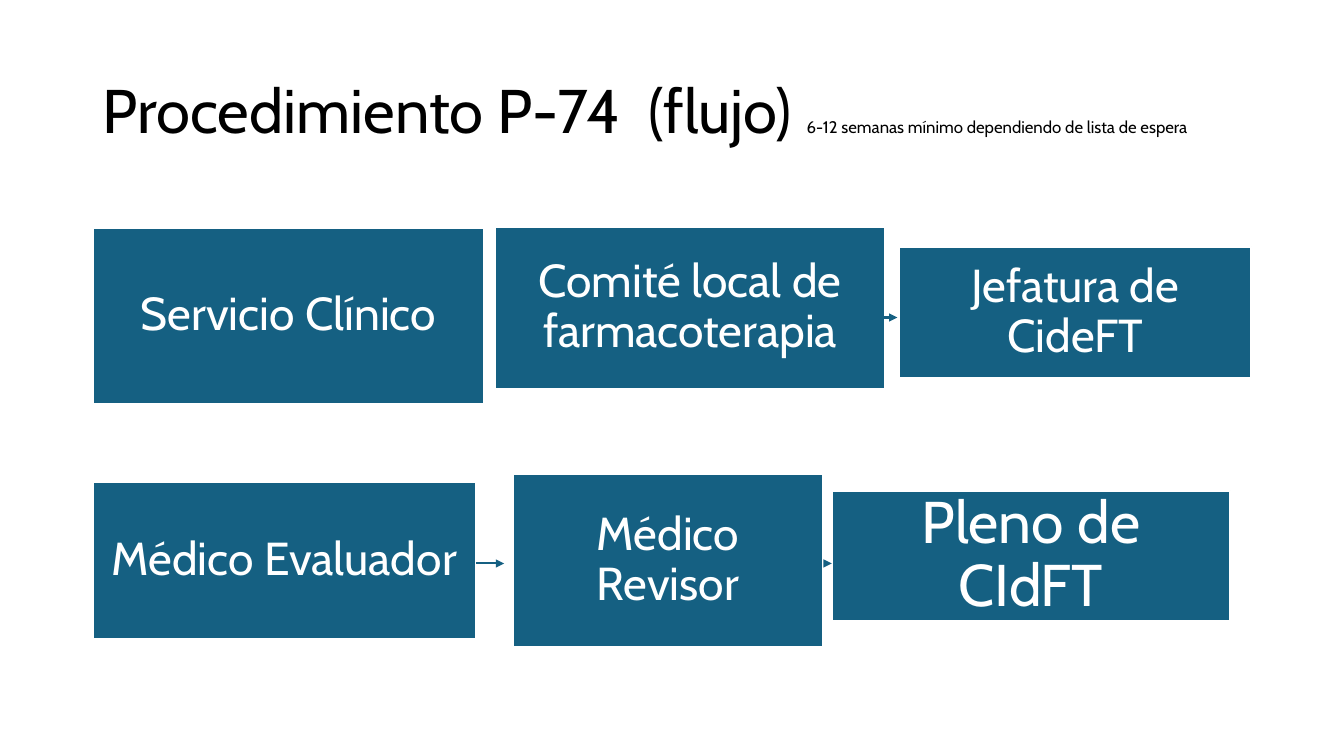
from dataclasses import dataclass

from lxml.etree import SubElement
from pptx import Presentation
from pptx.dml.color import RGBColor
from pptx.enum.shapes import MSO_CONNECTOR, MSO_SHAPE
from pptx.enum.text import MSO_ANCHOR, MSO_AUTO_SIZE, PP_ALIGN
from pptx.oxml.ns import qn
from pptx.slide import Slide
from pptx.util import Emu, Pt

EMU_PER_PX = 9144
FONT = "Cabin"
COLORS = {"box": "156082", "white": "FFFFFF", "black": "000000"}


@dataclass(frozen=True)
class Step:
    label: str
    left: int
    top: int
    width: int
    height: int
    size: int = 33
    inset: int = 14


@dataclass(frozen=True)
class Arrow:
    start: int
    end: int
    y: int


STEPS = [
    Step("Servicio Clínico", 92, 226, 388, 175),
    Step("Comité local de farmacoterapia", 491, 225, 387, 161),
    Step("Jefatura de CideFT", 892, 245, 349, 130),
    Step("Médico Evaluador", 92, 478, 380, 156),
    Step("Médico Revisor", 509, 470, 307, 172),
    Step("Pleno de CIdFT", 825, 487, 395, 129, size=42, inset=17),
]
ARROWS = [Arrow(874, 890, 315), Arrow(472, 500, 559), Arrow(818, 825, 559)]


def px(length: int) -> Emu:
    return Emu(length * EMU_PER_PX)


def color(name: str) -> RGBColor:
    return RGBColor.from_string(COLORS[name])


def write_title(page: Slide) -> None:
    title = page.shapes.title
    title.left, title.top, title.width, title.height = px(92), px(40), px(1150), px(145)
    frame = title.text_frame
    frame.auto_size = MSO_AUTO_SIZE.NONE
    frame.vertical_anchor = MSO_ANCHOR.MIDDLE
    para = frame.paragraphs[0]
    para.alignment = PP_ALIGN.LEFT
    para.line_spacing = 0.9
    para.font.name = FONT
    para.font.color.rgb = color("black")
    for words, size in (
        ("Procedimiento P-74  (flujo) ", 44),
        ("6-12 semanas mínimo dependiendo de lista de espera", 12),
    ):
        span = para.add_run()
        span.text = words
        span.font.size = Pt(size)


def draw_step(page: Slide, step: Step) -> None:
    box = page.shapes.add_shape(
        MSO_SHAPE.RECTANGLE, px(step.left), px(step.top), px(step.width), px(step.height)
    )
    box.shadow.inherit = False
    box.fill.solid()
    box.fill.fore_color.rgb = color("box")
    box.line.color.rgb = color("white")
    box.line.width = Pt(1.5)
    frame = box.text_frame
    frame.word_wrap = True
    frame.vertical_anchor = MSO_ANCHOR.MIDDLE
    frame.margin_left = frame.margin_right = px(step.inset)
    frame.margin_top = frame.margin_bottom = px(step.inset)
    para = frame.paragraphs[0]
    para.text = step.label
    para.alignment = PP_ALIGN.CENTER
    para.line_spacing = 0.9
    para.font.name = FONT
    para.font.size = Pt(step.size)
    para.font.color.rgb = color("white")


def draw_arrow(page: Slide, arrow: Arrow) -> None:
    connector = page.shapes.add_connector(
        MSO_CONNECTOR.STRAIGHT, px(arrow.start), px(arrow.y), px(arrow.end), px(arrow.y)
    )
    connector.line.color.rgb = color("box")
    connector.line.width = Pt(1.5)
    SubElement(connector.line._get_or_add_ln(), qn("a:tailEnd"), type="triangle")
    SubElement(connector._element.spPr, qn("a:effectLst"))


def main() -> None:
    deck = Presentation()
    deck.slide_width, deck.slide_height = px(1333), px(750)
    page = deck.slides.add_slide(deck.slide_layouts.get_by_name("Title Only"))
    write_title(page)
    for step in STEPS:
        draw_step(page, step)
    for arrow in ARROWS:
        draw_arrow(page, arrow)
    deck.save("out.pptx")


if __name__ == "__main__":
    main()
